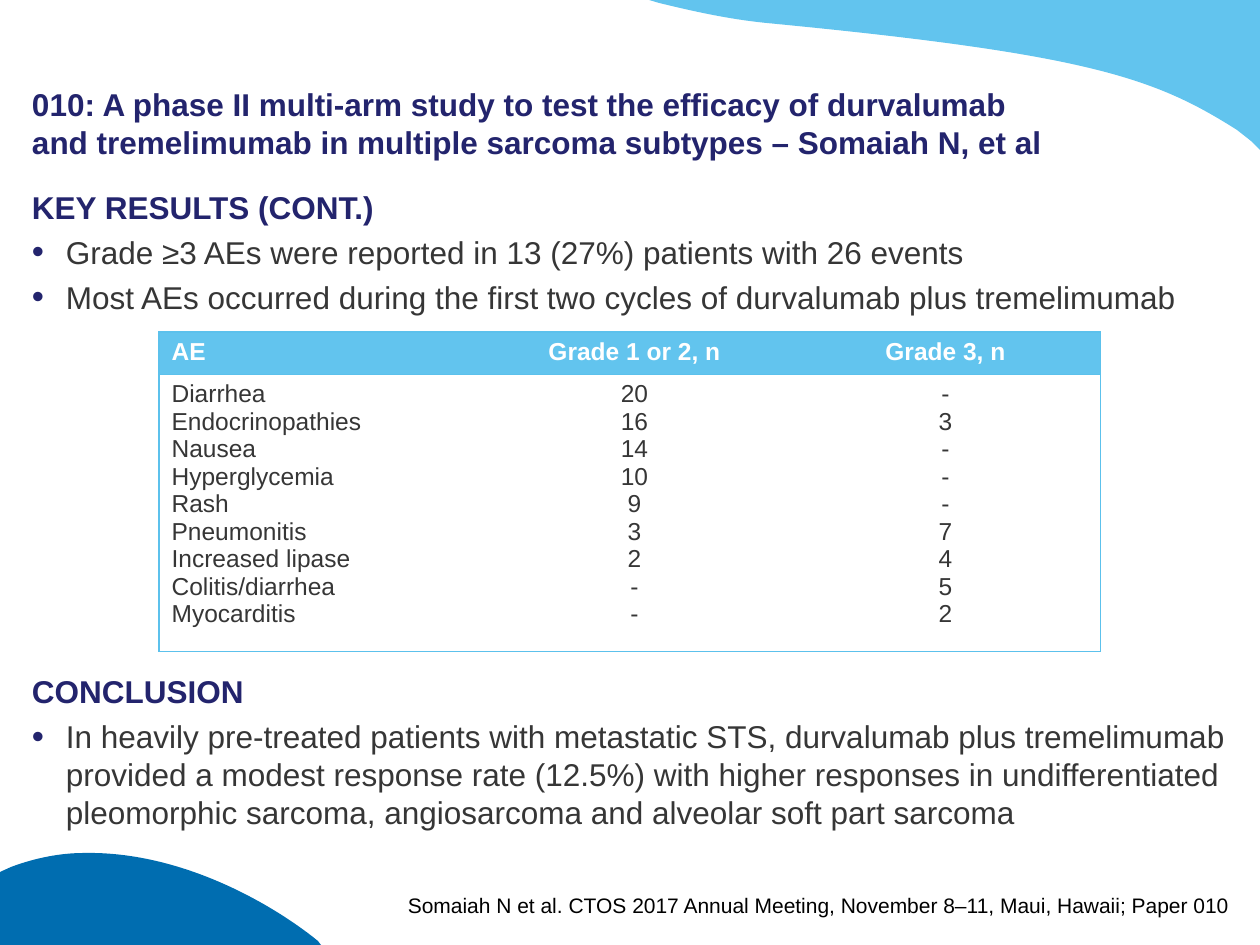
from dataclasses import dataclass
from typing import NamedTuple

from lxml.etree import SubElement
from pptx import Presentation
from pptx.dml.color import RGBColor
from pptx.enum.text import MSO_ANCHOR, PP_ALIGN
from pptx.oxml.ns import qn
from pptx.util import Emu, Pt

EMU_PER_PIXEL = 914400 / 126


@dataclass(frozen=True)
class Theme:
    font: str = "Arial"
    sky: str = "62C4EE"
    ocean: str = "006DB0"
    navy: str = "23246D"
    body: str = "363636"
    black: str = "000000"
    white: str = "FFFFFF"
    border: str = "5CC1EC"
    text_size: int = 18
    table_size: int = 14
    source_size: int = 12
    border_width: float = 0.75


class Box(NamedTuple):
    left: int
    top: int
    width: int
    height: int


class Wave(NamedTuple):
    color: str
    start: tuple
    segments: list


class BodyLine(NamedTuple):
    text: str
    heading: bool = False
    space_before: int = 0


class Column(NamedTuple):
    heading: str
    width: int
    alignment: PP_ALIGN
    values: list


THEME = Theme()
SLIDE_WIDTH, SLIDE_HEIGHT = 1260, 945
BULLET_INDENT = 34
ROW_HEIGHTS = (42, 277)

WAVES = [
    Wave(THEME.sky, (649, 0), [
        [(1260, 0)], [(1260, 150)], [(1251, 141)],
        [(1246, 137), (1242, 134), (1237, 130)],
        [(1155, 78), (1089, 54), (766, 23)],
        [(727, 19), (692, 11), (659, 3)],
    ]),
    Wave(THEME.ocean, (84, 853), [
        [(183, 851), (275, 906), (318, 941)],
        [(321, 945)], [(0, 945)], [(0, 872)], [(11, 867)],
        [(35, 858), (60, 853), (84, 853)],
    ]),
]

TITLE = ("010: A phase II multi-arm study to test the efficacy of durvalumab "
         "and tremelimumab in multiple sarcoma subtypes – Somaiah N, et al")
SOURCE = "Somaiah N et al. CTOS 2017 Annual Meeting, November 8–11, Maui, Hawaii; Paper 010"

BODY = [
    BodyLine("KEY RESULTS (CONT.)", heading=True),
    BodyLine("Grade ≥3 AEs were reported in 13 (27%) patients with 26 events"),
    BodyLine("Most AEs occurred during the first two cycles of durvalumab plus tremelimumab"),
    BodyLine("CONCLUSION", heading=True, space_before=200),
    BodyLine("In heavily pre-treated patients with metastatic STS, durvalumab plus "
             "tremelimumab provided a modest response rate (12.5%) with higher responses in "
             "undifferentiated pleomorphic sarcoma, angiosarcoma and alveolar soft part sarcoma"),
]

COLUMNS = [
    Column("AE", 320, PP_ALIGN.LEFT, [
        "Diarrhea", "Endocrinopathies", "Nausea", "Hyperglycemia", "Rash",
        "Pneumonitis", "Increased lipase", "Colitis/diarrhea", "Myocarditis"]),
    Column("Grade 1 or 2, n", 311, PP_ALIGN.CENTER,
           ["20", "16", "14", "10", "9", "3", "2", "-", "-"]),
    Column("Grade 3, n", 311, PP_ALIGN.CENTER,
           ["-", "3", "-", "-", "-", "7", "4", "5", "2"]),
]


def px(pixels: int) -> Emu:
    return Emu(round(pixels * EMU_PER_PIXEL))


def write_text(paragraph, text: str, *, size: int, color: str, bold: bool = False,
               alignment: PP_ALIGN = PP_ALIGN.LEFT, space_before: int = 0,
               space_after: int = 0) -> None:
    paragraph.alignment = alignment
    paragraph.space_before = Pt(space_before)
    paragraph.space_after = Pt(space_after)
    run = paragraph.add_run()
    run.text = text
    run.font.name = THEME.font
    run.font.size = Pt(size)
    run.font.bold = bold
    run.font.color.rgb = RGBColor.from_string(color)


def next_paragraph(text_frame, index: int):
    return text_frame.add_paragraph() if index else text_frame.paragraphs[0]


def add_bullet(paragraph) -> None:
    properties = paragraph._p.get_or_add_pPr()
    properties.set("marL", str(px(BULLET_INDENT)))
    properties.set("indent", str(-px(BULLET_INDENT)))
    color = SubElement(properties, qn("a:buClr"))
    SubElement(color, qn("a:srgbClr"), val=THEME.navy)
    SubElement(properties, qn("a:buSzPct"), val="110000")
    SubElement(properties, qn("a:buFont"), typeface=THEME.font)
    SubElement(properties, qn("a:buChar"), char="•")


def add_text_frame(slide, box: Box, *, anchor: MSO_ANCHOR = MSO_ANCHOR.TOP,
                   inset_top: int = 0, inset_bottom: int = 0, wrap: bool = True):
    text_frame = slide.shapes.add_textbox(*map(px, box)).text_frame
    text_frame.word_wrap = wrap
    text_frame.vertical_anchor = anchor
    text_frame.margin_left = text_frame.margin_right = 0
    text_frame.margin_top, text_frame.margin_bottom = px(inset_top), px(inset_bottom)
    return text_frame


def bend_segments(shape, segments: list) -> None:
    lines = iter(list(shape._element.iter(qn("a:lnTo"))))
    for segment in segments:
        parts = [next(lines) for _ in segment]
        if len(parts) == 3:
            first = parts[0]
            curve = first.makeelement(qn("a:cubicBezTo"))
            first.addprevious(curve)
            for part in parts:
                curve.append(part[0])
                part.getparent().remove(part)


def add_wave(slide, wave: Wave) -> None:
    builder = slide.shapes.build_freeform(*wave.start, scale=EMU_PER_PIXEL)
    builder.add_line_segments([point for segment in wave.segments for point in segment])
    shape = builder.convert_to_shape()
    bend_segments(shape, wave.segments)
    shape.shadow.inherit = False
    shape.fill.solid()
    shape.fill.fore_color.rgb = RGBColor.from_string(wave.color)
    shape.line.fill.background()


def set_borders(cell, visible: dict[str, bool]) -> None:
    properties = cell._tc.get_or_add_tcPr()
    for side, shown in visible.items():
        line = SubElement(properties, qn(f"a:ln{side}"), w=str(Pt(THEME.border_width)))
        fill = SubElement(line, qn("a:solidFill" if shown else "a:noFill"))
        if shown:
            SubElement(fill, qn("a:srgbClr"), val=THEME.border)


def add_events_table(slide, left: int, top: int, columns: list[Column]) -> None:
    box = Box(left, top, sum(column.width for column in columns), sum(ROW_HEIGHTS))
    table = slide.shapes.add_table(len(ROW_HEIGHTS), len(columns), *map(px, box)).table
    table.first_row = table.horz_banding = False
    for row, height in zip(table.rows, ROW_HEIGHTS):
        row.height = px(height)
    for column_index, column in enumerate(columns):
        table.columns[column_index].width = px(column.width)
        for row_index, lines in enumerate(([column.heading], column.values)):
            header = row_index == 0
            cell = table.cell(row_index, column_index)
            set_borders(cell, {"L": column_index == 0, "R": column_index == len(columns) - 1,
                               "T": True, "B": True})
            if header:
                cell.fill.solid()
                cell.fill.fore_color.rgb = RGBColor.from_string(THEME.sky)
            else:
                cell.fill.background()
            for index, line in enumerate(lines):
                write_text(next_paragraph(cell.text_frame, index), line, bold=header,
                           size=THEME.table_size, alignment=column.alignment,
                           color=THEME.white if header else THEME.body)


def main() -> None:
    presentation = Presentation()
    presentation.slide_width, presentation.slide_height = px(SLIDE_WIDTH), px(SLIDE_HEIGHT)
    slide = presentation.slides.add_slide(presentation.slide_layouts[6])
    for wave in WAVES:
        add_wave(slide, wave)
    title = add_text_frame(slide, Box(32, 31, 1026, 130), anchor=MSO_ANCHOR.BOTTOM, inset_top=6)
    write_text(title.paragraphs[0], TITLE, size=THEME.text_size, color=THEME.navy, bold=True)
    body = add_text_frame(slide, Box(32, 182, 1197, 732), inset_top=6, inset_bottom=6)
    for index, line in enumerate(BODY):
        paragraph = next_paragraph(body, index)
        write_text(paragraph, line.text, size=THEME.text_size, bold=line.heading,
                   color=THEME.navy if line.heading else THEME.body,
                   space_before=line.space_before, space_after=4)
        if not line.heading:
            add_bullet(paragraph)
    source = add_text_frame(slide, Box(402, 893, 828, 25), anchor=MSO_ANCHOR.BOTTOM, wrap=False)
    write_text(source.paragraphs[0], SOURCE, size=THEME.source_size, color=THEME.black,
               alignment=PP_ALIGN.RIGHT)
    add_events_table(slide, 159, 332, COLUMNS)
    presentation.save("out.pptx")


if __name__ == "__main__":
    main()
